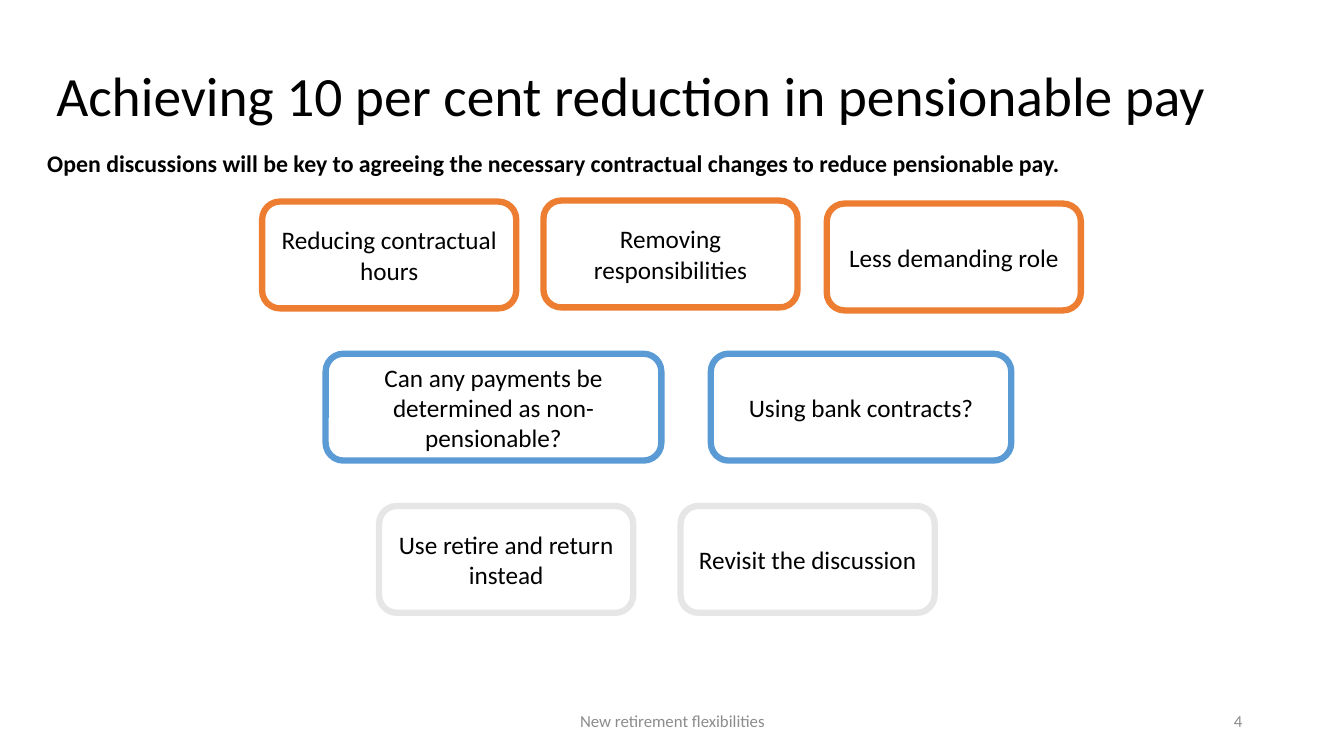
from typing import NamedTuple

from pptx import Presentation
from pptx.dml.color import RGBColor
from pptx.enum.shapes import MSO_SHAPE
from pptx.enum.text import MSO_ANCHOR, PP_ALIGN
from pptx.shapes.base import BaseShape
from pptx.slide import Slide
from pptx.util import Inches, Pt

FONT = "Calibri"
COLORS = {
    "text": "000000",
    "footer": "8C8C8C",
    "box": "FFFFFF",
    "orange": "ED7D31",
    "blue": "5B9BD5",
    "grey": "E7E6E6",
}
BOX_WIDTH = 2.52
BOX_HEIGHT = 1.06
BLUE_TOP = 3.51
GREY_TOP = 5.02


class Label(NamedTuple):
    text: str
    left: float
    top: float
    width: float
    height: float
    size: float
    color: str = "text"
    bold: bool = False
    align: PP_ALIGN = PP_ALIGN.LEFT
    anchor: MSO_ANCHOR = MSO_ANCHOR.MIDDLE
    line_spacing: float = 1.0
    space_before: float = 0


class OptionBox(NamedTuple):
    text: str
    left: float
    top: float
    outline: str
    width: float = BOX_WIDTH


LABELS = [
    Label("Achieving 10 per cent reduction in pensionable pay",
          0.46, 0.41, 12.28, 1.13, 39.6, line_spacing=0.9),
    Label("New retirement flexibilities", 4.42, 6.95, 4.5, 0.4, 12,
          color="footer", align=PP_ALIGN.CENTER),
    Label("4", 9.42, 6.95, 3, 0.4, 12, color="footer", align=PP_ALIGN.RIGHT),
    Label("Open discussions will be key to agreeing the necessary contractual "
          "changes to reduce pensionable pay.",
          0.37, 1.36, 12.28, 0.6, 17, bold=True, anchor=MSO_ANCHOR.TOP,
          line_spacing=1.25, space_before=20),
]

OPTION_BOXES = [
    OptionBox("Reducing contractual hours", 2.6, 2, "orange"),
    OptionBox("Removing responsibilities", 5.39, 1.99, "orange"),
    OptionBox("Less demanding role", 8.2, 2.02, "orange"),
    OptionBox("Can any payments be determined as non-pensionable?",
              3.23, BLUE_TOP, "blue", 3.33),
    OptionBox("Using bank contracts?", 7.05, BLUE_TOP, "blue", 2.98),
    OptionBox("Use retire and return instead", 3.76, GREY_TOP, "grey"),
    OptionBox("Revisit the discussion", 6.75, GREY_TOP, "grey"),
]


def rgb(name: str) -> RGBColor:
    return RGBColor.from_string(COLORS[name])


def write_text(shape: BaseShape, text: str, size: float, color: str = "text",
               bold: bool = False, align: PP_ALIGN = PP_ALIGN.CENTER,
               anchor: MSO_ANCHOR = MSO_ANCHOR.MIDDLE) -> None:
    text_frame = shape.text_frame
    text_frame.text = text
    text_frame.word_wrap = True
    text_frame.vertical_anchor = anchor
    paragraph = text_frame.paragraphs[0]
    paragraph.alignment = align
    font = paragraph.runs[0].font
    font.name = FONT
    font.size = Pt(size)
    font.bold = bold
    font.color.rgb = rgb(color)


def add_label(slide: Slide, label: Label) -> None:
    shape = slide.shapes.add_textbox(Inches(label.left), Inches(label.top),
                                     Inches(label.width), Inches(label.height))
    write_text(shape, label.text, label.size, label.color, label.bold,
               label.align, label.anchor)
    paragraph = shape.text_frame.paragraphs[0]
    paragraph.line_spacing = label.line_spacing
    paragraph.space_before = Pt(label.space_before)


def add_option_box(slide: Slide, box: OptionBox) -> None:
    shape = slide.shapes.add_shape(MSO_SHAPE.ROUNDED_RECTANGLE,
                                   Inches(box.left), Inches(box.top),
                                   Inches(box.width), Inches(BOX_HEIGHT))
    shape.shadow.inherit = False
    shape.fill.solid()
    shape.fill.fore_color.rgb = rgb("box")
    shape.line.color.rgb = rgb(box.outline)
    shape.line.width = Pt(4.5)
    write_text(shape, box.text, 18)


def main() -> None:
    presentation = Presentation()
    presentation.slide_width = Inches(13.33)
    presentation.slide_height = Inches(7.5)
    slide = presentation.slides.add_slide(presentation.slide_layouts[6])
    for label in LABELS:
        add_label(slide, label)
    for box in OPTION_BOXES:
        add_option_box(slide, box)
    presentation.save("out.pptx")


if __name__ == "__main__":
    main()
